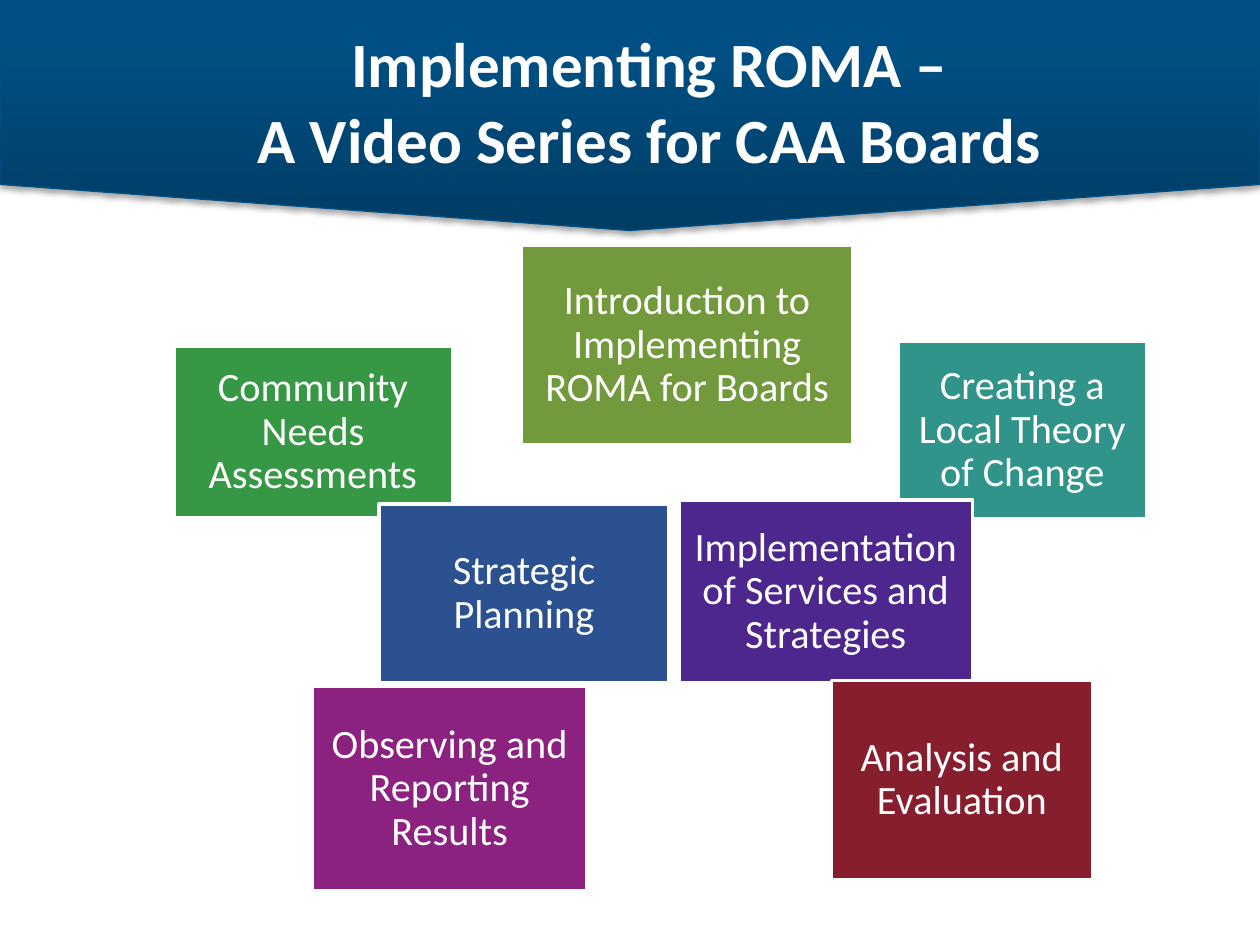
"""Build the title banner and the seven topic boxes of the video series."""
from lxml import etree
from pptx import Presentation
from pptx.dml.color import RGBColor
from pptx.enum.shapes import MSO_SHAPE
from pptx.enum.text import MSO_ANCHOR, MSO_AUTO_SIZE, PP_ALIGN
from pptx.oxml import parse_xml
from pptx.util import Inches, Pt

BANNER, RECT = MSO_SHAPE.FLOWCHART_OFFPAGE_CONNECTOR, MSO_SHAPE.RECTANGLE
MIDDLE, CENTER, FIXED = MSO_ANCHOR.MIDDLE, PP_ALIGN.CENTER, MSO_AUTO_SIZE.NONE
THEME = {
    "font": "Calibri", "title": 36, "body": 23,
    "white": "FFFFFF", "edge": "005085", "deep": "003D65", "top": "004F84",
    "green": "369745", "olive": "72993C", "teal": "31948A", "blue": "2C5191",
    "violet": "4D278E", "plum": "8B227F", "red": "871E2E",
}
SHADOW = """<a:effectLst xmlns:a="http://schemas.openxmlformats.org/drawingml/2006/main">
<a:outerShdw blurRad="39370" dist="22860" dir="5400000" rotWithShape="0">
<a:srgbClr val="000000"><a:alpha val="35000"/></a:srgbClr></a:outerShdw></a:effectLst>"""
TOPICS = [
    ("Introduction to Implementing ROMA for Boards", "olive", (4.14, 1.95, 2.63, 1.58)),
    ("Community Needs Assessments", "green", (1.38, 2.75, 2.21, 1.36)),
    ("Creating a Local Theory of Change", "teal", (7.13, 2.71, 1.97, 1.41)),
    ("Strategic Planning", "blue", (3.01, 4, 2.3, 1.42)),
    ("Implementation of Services and Strategies", "violet", (5.39, 3.97, 2.33, 1.45)),
    ("Observing and Reporting Results", "plum", (2.48, 5.45, 2.18, 1.62)),
    ("Analysis and Evaluation", "red", (6.6, 5.4, 2.07, 1.58)),
]


def tint(name):
    return RGBColor.from_string(THEME[name])


def write(shape, text, size, bold, space):
    frame = shape.text_frame
    frame.text = text
    pad = Inches(0.1)
    look = {"word_wrap": True, "auto_size": FIXED, "vertical_anchor": MIDDLE,
            "margin_left": pad, "margin_right": pad}
    para = frame.paragraphs[0]
    para.font.color.rgb = tint("white")
    for part, values in (
        (frame, look),
        (para, {"alignment": CENTER, "line_spacing": space}),
        (para.font, {"name": THEME["font"], "size": Pt(THEME[size]), "bold": bold}),
    ):
        for key, value in values.items():
            setattr(part, key, value)


deck = Presentation()
deck.slide_width, deck.slide_height = Inches(10), Inches(7.5)
slide = deck.slides.add_slide(deck.slide_layouts[5])
shapes = slide.shapes

banner = shapes.add_shape(BANNER, 0, 0, Inches(10), Inches(1.83))
banner.fill.gradient()
banner.fill.gradient_angle = 90
for stop, name, place in zip(banner.fill.gradient_stops, ("deep", "top"), (0, 0.8)):
    stop.color.rgb = tint(name)
    stop.position = place
banner.line.color.rgb = tint("edge")
banner.line.width = Pt(0.75)
etree.strip_elements(banner.element.spPr, "{*}effectLst")
banner.element.spPr.append(parse_xml(SHADOW))

title = shapes.title
banner.element.addnext(title.element)
title.left, title.top, title.width, title.height = map(Inches, (0.71, 0.17, 9, 1.25))
write(title, "Implementing ROMA – \vA Video Series for CAA Boards ", "title", True, 1.0)

for text, color, area in TOPICS:
    box = shapes.add_shape(RECT, *map(Inches, area))
    box.shadow.inherit = False
    box.fill.solid()
    box.fill.fore_color.rgb = tint(color)
    box.line.color.rgb = tint("white")
    box.line.width = Pt(2)
    write(box, text, "body", False, 0.9)

deck.save("out.pptx")
